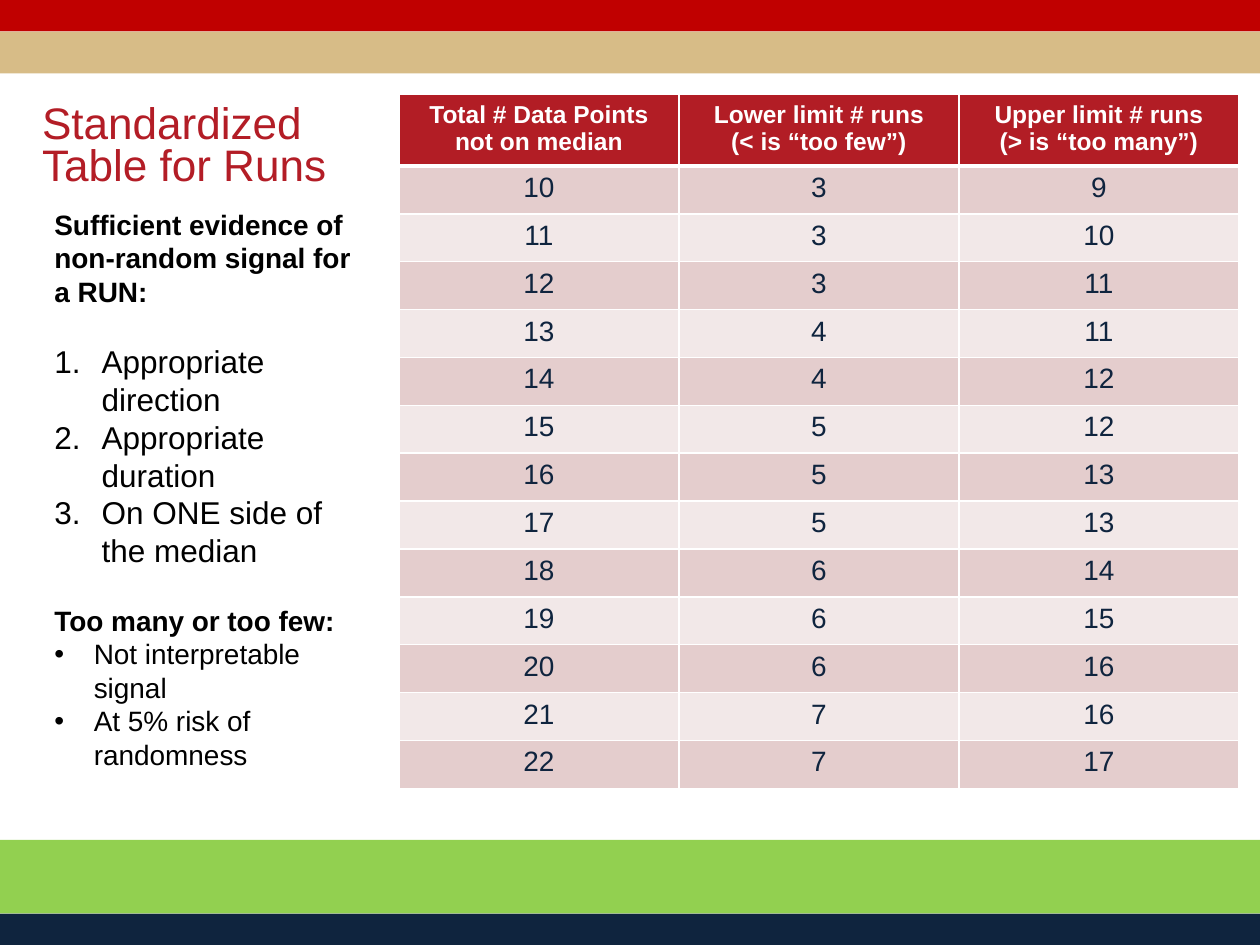
"""Build the slide with the standardized table for runs."""
from lxml import etree
from pptx import Presentation
from pptx.dml.color import RGBColor
from pptx.enum.shapes import MSO_SHAPE
from pptx.enum.text import MSO_ANCHOR, MSO_AUTO_SIZE, PP_ALIGN
from pptx.oxml.ns import qn
from pptx.util import Pt

RECTANGLE = MSO_SHAPE.RECTANGLE
TOP, MIDDLE = MSO_ANCHOR.TOP, MSO_ANCHOR.MIDDLE
LEFT, CENTER = PP_ALIGN.LEFT, PP_ALIGN.CENTER
NO_FIT, GROW = MSO_AUTO_SIZE.NONE, MSO_AUTO_SIZE.SHAPE_TO_FIT_TEXT

FONT = "Arial"
NAVY = RGBColor(0x0F, 0x24, 0x3E)
GREEN = RGBColor(0x92, 0xD0, 0x50)
RED = RGBColor(0xC0, 0x00, 0x00)
TAN = RGBColor(0xD7, 0xBC, 0x87)
TITLE_RED = RGBColor(0xB3, 0x1D, 0x26)
HEADER_RED = RGBColor(0xB2, 0x1D, 0x25)
DARK_PINK = RGBColor(0xE4, 0xCD, 0xCD)
LIGHT_PINK = RGBColor(0xF2, 0xE8, 0xE8)
WHITE = RGBColor(0xFF, 0xFF, 0xFF)
BLACK = RGBColor(0x00, 0x00, 0x00)

SLIDE_WIDTH, SLIDE_HEIGHT = 720, 540
BANDS = [(522, 18, NAVY), (480, 42, GREEN), (0, 18, RED), (18, 24, TAN)]

TITLE = "Standardized Table for Runs"
TITLE_BOX = (24, 54, 190, 61)
GUIDANCE_BOX = (24, 115, 190, 332)
SECTION_GAP = 19.5
NUMBERED = ("buAutoNum", {"type": "arabicPeriod"}, 27)
BULLETED = ("buChar", {"char": "•"}, 22.5)
GUIDANCE = [
    ("Sufficient evidence of non-random signal for a RUN:", 16, True, None, 0),
    ("Appropriate direction", 18, False, NUMBERED, SECTION_GAP),
    ("Appropriate duration", 18, False, NUMBERED, 0),
    ("On ONE side of the median", 18, False, NUMBERED, 0),
    ("Too many or too few:", 16, True, None, SECTION_GAP),
    ("Not interpretable signal", 16, False, BULLETED, 0),
    ("At 5% risk of randomness", 16, False, BULLETED, 0),
]

HEADERS = [
    ["Total # Data Points not on median"],
    ["Lower limit # runs", "(< is “too few”)"],
    ["Upper limit # runs", "(> is “too many”)"],
]
RUN_LIMITS = [
    (10, 3, 9), (11, 3, 10), (12, 3, 11), (13, 4, 11), (14, 4, 12),
    (15, 5, 12), (16, 5, 13), (17, 5, 13), (18, 6, 14), (19, 6, 15),
    (20, 6, 16), (21, 7, 16), (22, 7, 17),
]
TABLE_LEFT, TABLE_TOP = 228, 54
COLUMN_WIDTH, HEADER_HEIGHT, ROW_HEIGHT = 160, 36.7, 27.36


def points(lengths):
    return [Pt(length) for length in lengths]


def add_text(paragraph, text, size, color, bold=False):
    run = paragraph.add_run()
    run.text = text
    run.font.name = FONT
    run.font.size = Pt(size)
    run.font.bold = bold
    run.font.color.rgb = color


def set_marker(paragraph, marker):
    tag, attributes, indent = marker
    properties = paragraph._p.get_or_add_pPr()
    properties.set("marL", str(Pt(indent)))
    properties.set("indent", str(-Pt(indent)))
    if tag == "buChar":
        etree.SubElement(properties, qn("a:buFont"), typeface=FONT)
    etree.SubElement(properties, qn(f"a:{tag}"), attributes)


def set_borders(cell, widths):
    properties = cell._tc.get_or_add_tcPr()
    for side, width in widths.items():
        line = etree.SubElement(properties, qn(f"a:ln{side}"), w=str(Pt(width)))
        fill = etree.SubElement(line, qn("a:solidFill"))
        etree.SubElement(fill, qn("a:srgbClr"), val=str(WHITE))


def add_bands(slide):
    for top, height, color in BANDS:
        band = slide.shapes.add_shape(RECTANGLE, *points((0, top, SLIDE_WIDTH, height)))
        band.shadow.inherit = False
        band.fill.solid()
        band.fill.fore_color.rgb = color
        band.line.fill.background()


def fill_title(title):
    title.left, title.top, title.width, title.height = points(TITLE_BOX)
    frame = title.text_frame
    frame.margin_left = frame.margin_right = 0
    frame.margin_top = frame.margin_bottom = Pt(3.6)
    frame.vertical_anchor = MIDDLE
    frame.word_wrap = True
    frame.auto_size = NO_FIT
    heading = frame.paragraphs[0]
    heading.alignment = LEFT
    heading.line_spacing = 0.8
    add_text(heading, TITLE, 25.2, TITLE_RED)


def add_guidance(slide):
    frame = slide.shapes.add_textbox(*points(GUIDANCE_BOX)).text_frame
    frame.word_wrap = True
    frame.auto_size = GROW
    for index, (text, size, bold, marker, gap) in enumerate(GUIDANCE):
        paragraph = frame.add_paragraph() if index else frame.paragraphs[0]
        if gap:
            paragraph.space_before = Pt(gap)
        if marker:
            set_marker(paragraph, marker)
        add_text(paragraph, text, size, BLACK, bold)


def add_run_table(slide):
    rows = [HEADERS] + [[[str(value)] for value in limits] for limits in RUN_LIMITS]
    heights = [HEADER_HEIGHT] + [ROW_HEIGHT] * len(RUN_LIMITS)
    area = points((TABLE_LEFT, TABLE_TOP, COLUMN_WIDTH * len(HEADERS), sum(heights)))
    table = slide.shapes.add_table(len(rows), len(HEADERS), *area).table
    for column in table.columns:
        column.width = Pt(COLUMN_WIDTH)
    for row_index, (row, height) in enumerate(zip(rows, heights)):
        table.rows[row_index].height = Pt(height)
        is_header = row_index == 0
        size, color = (14, WHITE) if is_header else (16, NAVY)
        band_color = DARK_PINK if row_index % 2 else LIGHT_PINK
        borders = {"L": 1, "R": 1, "T": 3 if row_index == 1 else 1, "B": 3 if is_header else 1}
        for column_index, lines in enumerate(row):
            cell = table.cell(row_index, column_index)
            set_borders(cell, borders)
            cell.fill.solid()
            cell.fill.fore_color.rgb = HEADER_RED if is_header else band_color
            cell.vertical_anchor = TOP
            frame = cell.text_frame
            for line_index, line in enumerate(lines):
                paragraph = frame.add_paragraph() if line_index else frame.paragraphs[0]
                paragraph.alignment = CENTER
                add_text(paragraph, line, size, color, is_header)


def main():
    presentation = Presentation()
    presentation.slide_width, presentation.slide_height = points((SLIDE_WIDTH, SLIDE_HEIGHT))
    slide = presentation.slides.add_slide(presentation.slide_layouts[5])
    add_bands(slide)
    fill_title(slide.shapes.title)
    add_guidance(slide)
    add_run_table(slide)
    presentation.save("out.pptx")


if __name__ == "__main__":
    main()
